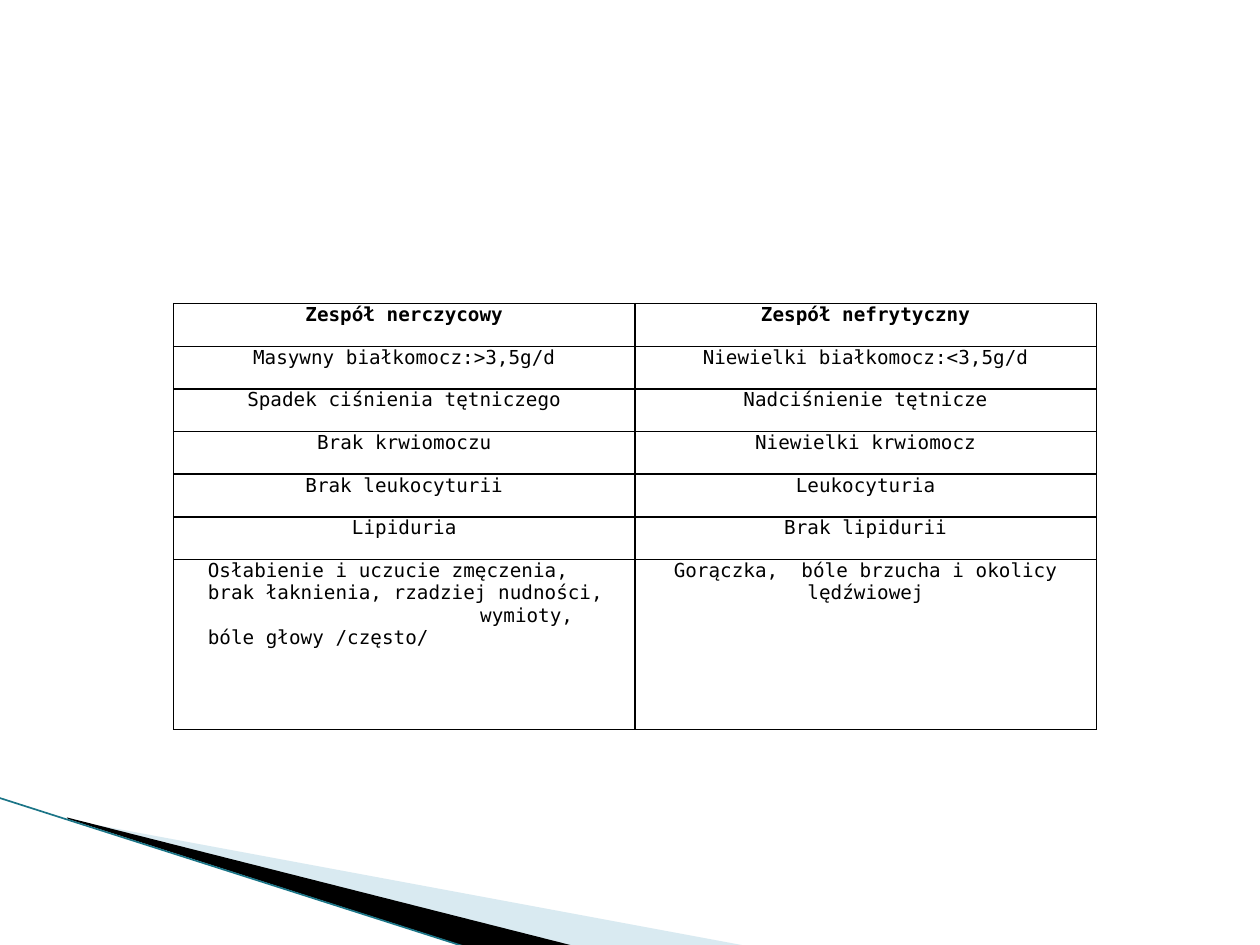
import pptx
import pptx.util
import pptx.dml.color
import pptx.enum.shapes
import pptx.enum.text
import pptx.oxml.ns
import lxml.etree

Cm = pptx.util.Cm
Pt = pptx.util.Pt
RGBColor = pptx.dml.color.RGBColor
qn = pptx.oxml.ns.qn
CENTER = pptx.enum.text.PP_ALIGN.CENTER
LEFT = pptx.enum.text.PP_ALIGN.LEFT

BLACK = RGBColor(0x00, 0x00, 0x00)
WHITE = RGBColor(0xFF, 0xFF, 0xFF)
PALE = RGBColor(0xA0, 0xCB, 0xDC)
TEAL = RGBColor(0x1B, 0x75, 0x87)
FONT = "DejaVu Sans Mono"

deck = pptx.Presentation()
deck.slide_width = Cm(25.4)
deck.slide_height = Cm(19.05)
slide = deck.slides.add_slide(deck.slide_layouts[6])

wedges = [
    (PALE, 40, [(1.4, 16.53), (15.11, 19.08), (11.58, 19.08), (1.4, 16.51)]),
    (BLACK, 100, [(1.35, 16.48), (11.61, 19.08), (9.45, 19.1), (1.37, 16.51)]),
]
for color, alpha, points in wedges:
    spots = [(Cm(x), Cm(y)) for x, y in points]
    pen = slide.shapes.build_freeform(*spots[0])
    pen.add_line_segments(spots[1:])
    wedge = pen.convert_to_shape()
    wedge.shadow.inherit = False
    wedge.fill.solid()
    wedge.fill.fore_color.rgb = color
    wedge.line.fill.background()
    if alpha < 100:
        tint = wedge._element.spPr.find(".//" + qn("a:srgbClr"))
        lxml.etree.SubElement(tint, qn("a:alpha"), val=str(alpha * 1000))

edge = slide.shapes.add_connector(
    pptx.enum.shapes.MSO_CONNECTOR.STRAIGHT, Cm(-0.03), Cm(16.08), Cm(9.42), Cm(19.1))
edge.line.color.rgb = TEAL
edge.line.width = Pt(0.95)
lxml.etree.SubElement(edge._element.spPr, qn("a:effectLst"))

rows = [
    ("Zespół nerczycowy", "Zespół nefrytyczny"),
    ("Masywny białkomocz:>3,5g/d", "Niewielki białkomocz:<3,5g/d"),
    ("Spadek ciśnienia tętniczego", "Nadciśnienie tętnicze"),
    ("Brak krwiomoczu", "Niewielki krwiomocz"),
    ("Brak leukocyturii", "Leukocyturia"),
    ("Lipiduria", "Brak lipidurii"),
    ("Osłabienie i uczucie zmęczenia,\n"
     "brak łaknienia, rzadziej nudności, wymioty,\n"
     "bóle głowy /często/",
     "Gorączka,  bóle brzucha i okolicy lędźwiowej"),
]
table = slide.shapes.add_table(
    len(rows), 2, Cm(3.5), Cm(6.12), Cm(18.6), Cm(8.6)).table
table.first_row = False
table.horz_banding = False
for col in table.columns:
    col.width = Cm(9.3)
for row in table.rows:
    row.height = Cm(0.86)
table.rows[len(rows) - 1].height = Cm(3.43)

for i, texts in enumerate(rows):
    for j, text in enumerate(texts):
        cell = table.cell(i, j)
        cell.margin_left = cell.margin_right = Cm(0.13)
        cell.margin_top = cell.margin_bottom = 0
        props = cell._tc.get_or_add_tcPr()
        for side in ("a:lnL", "a:lnR", "a:lnT", "a:lnB"):
            line = lxml.etree.SubElement(props, qn(side), w=str(Pt(1)))
            fill = lxml.etree.SubElement(line, qn("a:solidFill"))
            lxml.etree.SubElement(fill, qn("a:srgbClr"), val=str(BLACK))
        cell.fill.solid()
        cell.fill.fore_color.rgb = WHITE
        parts = text.split("\n")
        for n, part in enumerate(parts):
            frame = cell.text_frame
            para = frame.add_paragraph() if n else frame.paragraphs[0]
            para.alignment = CENTER
            if len(parts) > 1:
                para.alignment = LEFT
                form = para._p.get_or_add_pPr()
                form.set("marL", str(Cm(6.05)))
                form.set("indent", str(Cm(-5.49)))
            run = para.add_run()
            run.text = part
            run.font.name = FONT
            run.font.size = Pt(11)
            run.font.bold = i == 0
            run.font.color.rgb = BLACK

deck.save("out.pptx")
